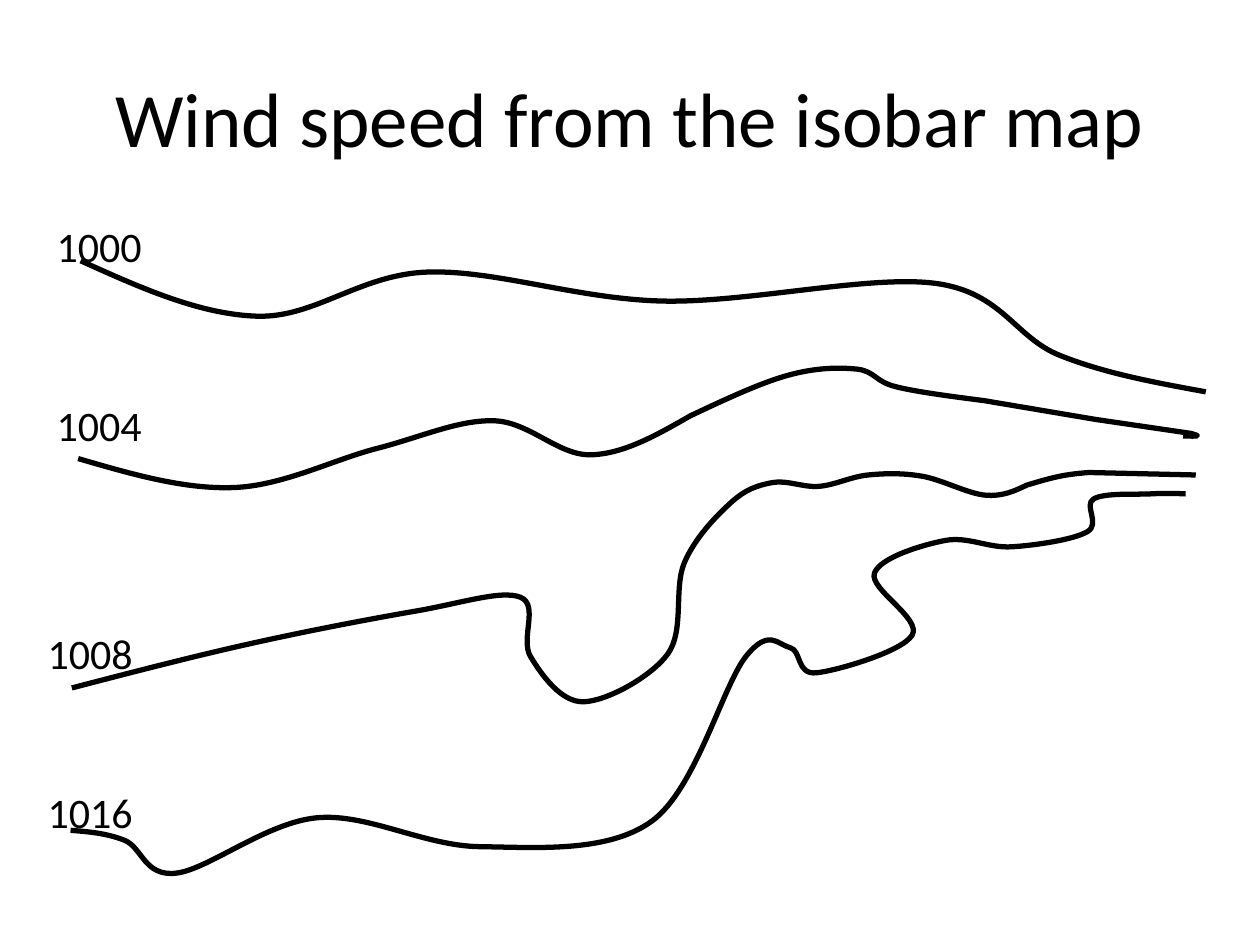
from lxml import etree
from pptx import Presentation
from pptx import util as u
from pptx.dml.color import RGBColor
from pptx.enum import text
from pptx.oxml.ns import qn

PX = 9144  # EMU per px, 100 px to the inch
FONT = "Calibri"
COLORS = {"ink": "000000", "background": "FFFFFF"}

# Each isobar: pressure, label position, and the smooth sections of its line.
# A section starts where the one before it ends, at a corner.
ISOBARS = [
    ("1000", (35, 170), [
        [(64, 207), (204, 251), (339, 216), (526, 239), (743, 225), (841, 282),
         (957, 311)],
    ]),
    ("1004", (35, 312), [
        [(62, 364), (185, 387), (299, 356), (392, 334), (469, 361), (548, 330)],
        [(625, 298), (680, 293), (711, 307), (781, 318)],
        [(870, 333)],
        [(945, 344)],
        [(950, 346), (939, 346)],
    ]),
    ("1008", (28, 493), [
        [(57, 546), (198, 511), (330, 485), (413, 474), (421, 521), (463, 557),
         (530, 519), (543, 447), (580, 399), (613, 383), (650, 386), (689, 377),
         (732, 378), (782, 393), (815, 385)],
        [(841, 378), (864, 375)],
        [(949, 377)],
    ]),
    ("1016", (28, 619), [
        [(56, 659), (99, 667), (140, 693), (252, 649), (381, 672), (517, 652),
         (592, 521), (627, 514), (648, 534), (724, 504), (694, 455), (750, 429),
         (803, 434), (863, 422), (868, 396), (913, 392), (941, 392)],
    ]),
]


def smooth(anchors):
    """Return control, control, end for each curve through the anchors."""
    tangents = [((after[0] - before[0]) / 6, (after[1] - before[1]) / 6)
                for before, after in zip(anchors, anchors[2:])]
    leaving = [(x + dx, y + dy) for (x, y), (dx, dy) in zip(anchors[1:], tangents)]
    arriving = [(x - dx, y - dy) for (x, y), (dx, dy) in zip(anchors[1:], tangents)]
    # At either end the control lies halfway to the neighbouring control.
    first, last = anchors[0], anchors[-1]
    inner_first = arriving[0] if arriving else last
    inner_last = leaving[-1] if leaving else first
    leaving.insert(0, ((first[0] + inner_first[0]) / 2, (first[1] + inner_first[1]) / 2))
    arriving.append(((last[0] + inner_last[0]) / 2, (last[1] + inner_last[1]) / 2))
    return [point for curve in zip(leaving, arriving, anchors[1:]) for point in curve]


def format_text(text_frame, size):
    for paragraph in text_frame.paragraphs:
        for run in paragraph.runs:
            run.font.name = FONT
            run.font.size = u.Pt(size)
            run.font.color.rgb = RGBColor.from_string(COLORS["ink"])


presentation = Presentation()
presentation.slide_width = 1000 * PX
presentation.slide_height = 750 * PX
slide = presentation.slides.add_slide(presentation.slide_layouts[5])
slide.background.fill.solid()
slide.background.fill.fore_color.rgb = RGBColor.from_string(COLORS["background"])

title = slide.shapes.title
title.left, title.top, title.width, title.height = (
    length * PX for length in (50, 30, 900, 125))
title.text_frame.text = "Wind speed from the isobar map"
title.text_frame.vertical_anchor = text.MSO_ANCHOR.MIDDLE
title.text_frame.paragraphs[0].alignment = text.PP_ALIGN.CENTER
format_text(title.text_frame, 44)

for pressure, label_position, sections in ISOBARS:
    start = sections[0][0]
    points = smooth(sections[0])
    for section in sections[1:]:
        points += smooth([points[-1]] + section)

    builder = slide.shapes.build_freeform(
        start[0] * PX, start[1] * PX, scale=1.0)
    builder.add_line_segments([(x * PX, y * PX) for x, y in points], close=False)
    isobar = builder.convert_to_shape()
    isobar.shadow.inherit = False
    isobar.fill.background()
    isobar.line.color.rgb = RGBColor.from_string(COLORS["ink"])
    isobar.line.width = u.Pt(3)

    # Every three straight segments become one curve.
    segments = list(isobar._element.iter(qn("a:lnTo")))
    for index in range(0, len(segments), 3):
        curve = etree.Element(qn("a:cubicBezTo"))
        segments[index].addprevious(curve)
        for segment in segments[index:index + 3]:
            curve.append(segment[0])
            segment.getparent().remove(segment)

for pressure, (left, top), sections in ISOBARS:
    label = slide.shapes.add_textbox(left * PX, top * PX, 118 * PX, 50 * PX)
    label.text_frame.word_wrap = True
    label.text_frame.auto_size = text.MSO_AUTO_SIZE.SHAPE_TO_FIT_TEXT
    label.text_frame.text = pressure
    format_text(label.text_frame, 24)

presentation.save("out.pptx")
